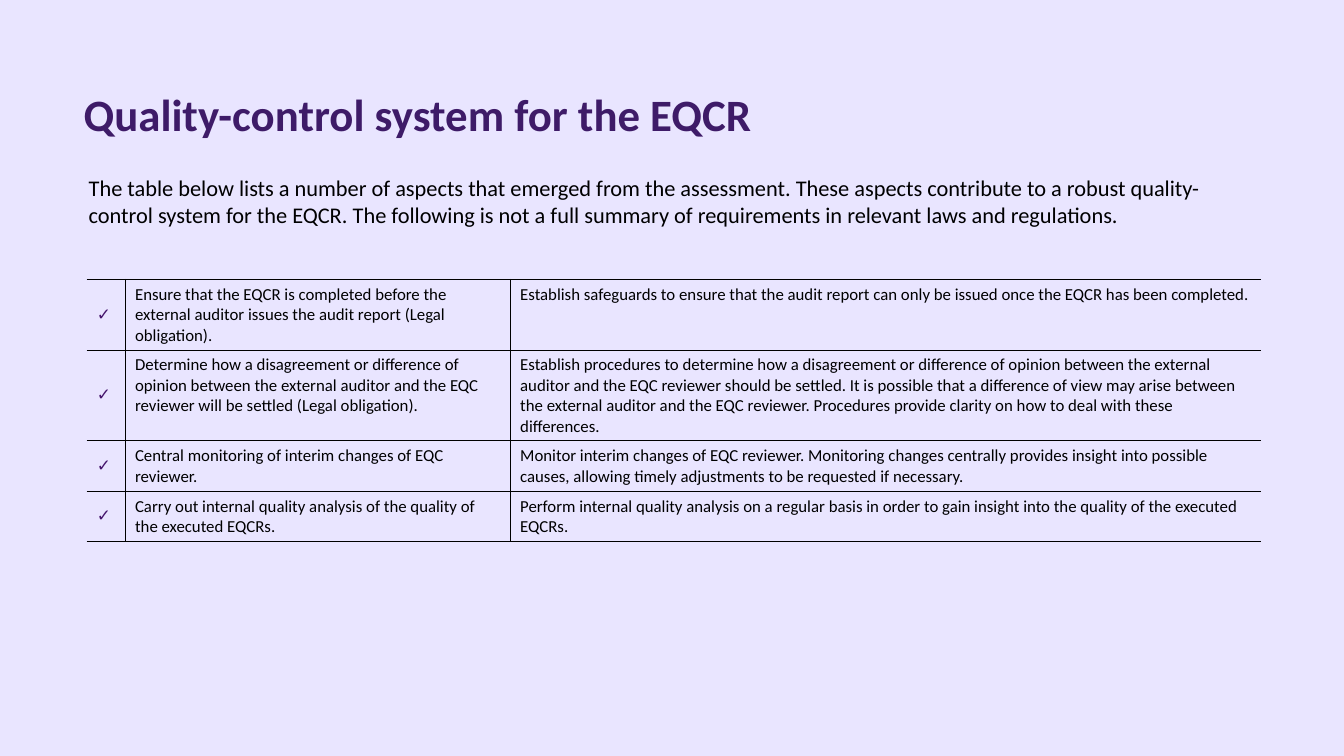
import pptx
import pptx.util
import pptx.dml.color
import pptx.enum.text
import pptx.oxml
import pptx.oxml.ns

Inches, Pt = pptx.util.Inches, pptx.util.Pt
RGBColor = pptx.dml.color.RGBColor

LAVENDER = RGBColor(0xE9, 0xE5, 0xFF)
PURPLE = RGBColor(0x3E, 0x1B, 0x68)
CHECK_PURPLE = RGBColor(0x45, 0x15, 0x6C)
BLACK = RGBColor(0, 0, 0)
FONT = "Calibri"

SLIDE_WIDTH, SLIDE_HEIGHT = 13.33, 7.5
LEFT, WIDTH = 0.83, 11.68
COLUMN_WIDTHS = (0.38, 3.82, 7.45)
ROW_HEIGHT = 0.41
BORDER_POINTS = 0.5

TITLE = "Quality-control system for the EQCR"
INTRO = (
    "The table below lists a number of aspects that emerged from the assessment. "
    "These aspects contribute to a robust quality-control system for the EQCR. "
    "The following is not a full summary of requirements in relevant laws and regulations."
)
ASPECTS = [
    ("Ensure that the EQCR is completed before the external auditor issues the audit "
     "report (Legal obligation).",
     "Establish safeguards to ensure that the audit report can only be issued once the "
     "EQCR has been completed."),
    ("Determine how a disagreement or difference of opinion between the external auditor "
     "and the EQC reviewer will be settled (Legal obligation).",
     "Establish procedures to determine how a disagreement or difference of opinion between "
     "the external auditor and the EQC reviewer should be settled. It is possible that a "
     "difference of view may arise between the external auditor and the EQC reviewer. "
     "Procedures provide clarity on how to deal with these differences."),
    ("Central monitoring of interim changes of EQC reviewer.",
     "Monitor interim changes of EQC reviewer. Monitoring changes centrally provides insight "
     "into possible causes, allowing timely adjustments to be requested if necessary."),
    ("Carry out internal quality analysis of the quality of the executed EQCRs.",
     "Perform internal quality analysis on a regular basis in order to gain insight into the "
     "quality of the executed EQCRs."),
]


def style(para, size, color, bold=False):
    para.font.name = FONT
    para.font.size = Pt(size)
    para.font.bold = bold
    para.font.color.rgb = color


def add_text(page, box, text, size, color, bold=False, indent=0, line_spacing=None):
    shape = page.shapes.add_textbox(*map(Inches, box))
    frame = shape.text_frame
    frame.word_wrap = True
    frame.margin_left = Inches(indent)
    frame.margin_right = frame.margin_top = frame.margin_bottom = 0
    para = frame.paragraphs[0]
    para.text = text
    para.line_spacing = line_spacing
    style(para, size, color, bold)


def set_borders(cell, visible):
    """Draw the sides named in visible (from L, R, T, B) and clear the others."""
    properties = cell._tc.get_or_add_tcPr()
    for position, side in enumerate("LRTB"):
        paint = (f'<a:solidFill><a:srgbClr val="{BLACK}"/></a:solidFill>'
                 if side in visible else "<a:noFill/>")
        line = pptx.oxml.parse_xml(
            f'<a:ln{side} {pptx.oxml.ns.nsdecls("a")} w="{Pt(BORDER_POINTS)}">'
            f"{paint}</a:ln{side}>")
        properties.insert(position, line)


def add_aspect_table(page, left, top):
    frame = page.shapes.add_table(
        len(ASPECTS), len(COLUMN_WIDTHS), Inches(left), Inches(top),
        Inches(sum(COLUMN_WIDTHS)), Inches(ROW_HEIGHT * len(ASPECTS)))
    table = frame.table
    table.first_row = table.horz_banding = False
    for column, width in zip(table.columns, COLUMN_WIDTHS):
        column.width = Inches(width)
    for row, aspect in zip(table.rows, ASPECTS):
        row.height = Inches(ROW_HEIGHT)
        for cell, text, sides in zip(row.cells, ("✓", *aspect), ("RTB", "LRTB", "LTB")):
            is_check = text == "✓"
            cell.text = text
            cell.fill.background()
            set_borders(cell, sides)
            style(cell.text_frame.paragraphs[0], 12,
                  CHECK_PURPLE if is_check else BLACK, is_check)
            if is_check:
                cell.vertical_anchor = pptx.enum.text.MSO_ANCHOR.MIDDLE


def build_slide(deck):
    page = deck.slides.add_slide(deck.slide_layouts[6])
    page.background.fill.solid()
    page.background.fill.fore_color.rgb = LAVENDER
    add_text(page, (LEFT, 0.95, WIDTH, 0.93), TITLE, 32, PURPLE, bold=True, line_spacing=0.84)
    add_text(page, (LEFT, 1.73, WIDTH, 1.2), INTRO, 16, BLACK, indent=0.05)
    add_aspect_table(page, 0.86, 2.77)


def main():
    deck = pptx.Presentation()
    deck.slide_width = Inches(SLIDE_WIDTH)
    deck.slide_height = Inches(SLIDE_HEIGHT)
    build_slide(deck)
    deck.save("out.pptx")


if __name__ == "__main__":
    main()
